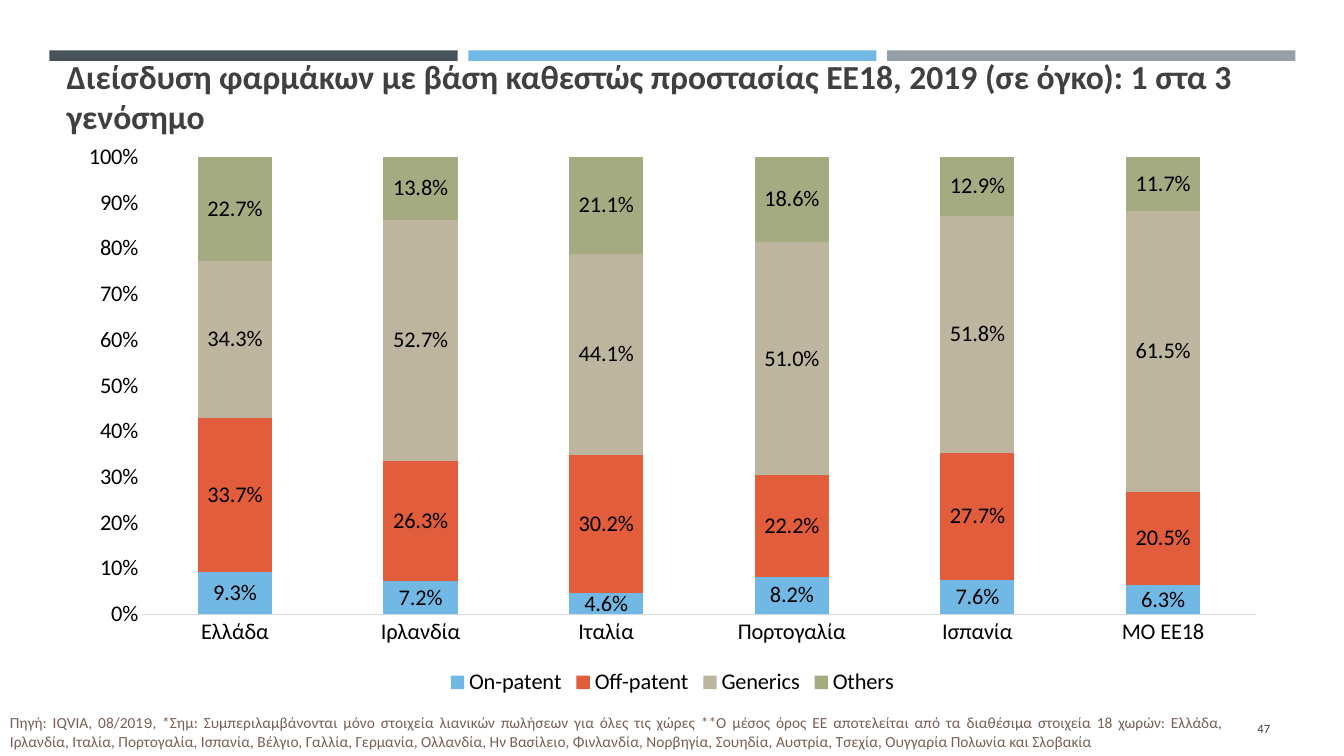
"""Builds the slide on medicine penetration by protection status, EU18, 2019."""
from dataclasses import dataclass

from pptx import Presentation
from pptx.chart.data import CategoryChartData
from pptx.dml.color import RGBColor
from pptx.enum.chart import XL_CHART_TYPE, XL_LABEL_POSITION, XL_LEGEND_POSITION, XL_TICK_MARK
from pptx.enum.shapes import MSO_SHAPE
from pptx.enum.text import MSO_ANCHOR, MSO_AUTO_SIZE, PP_ALIGN
from pptx.util import Pt

STACKED = XL_CHART_TYPE.COLUMN_STACKED_100
CENTER_LABEL = XL_LABEL_POSITION.CENTER
LEGEND_BOTTOM = XL_LEGEND_POSITION.BOTTOM
NO_TICK = XL_TICK_MARK.NONE
RECTANGLE = MSO_SHAPE.RECTANGLE
TOP, MIDDLE, BOTTOM = MSO_ANCHOR.TOP, MSO_ANCHOR.MIDDLE, MSO_ANCHOR.BOTTOM
LEFT, RIGHT, JUSTIFY = PP_ALIGN.LEFT, PP_ALIGN.RIGHT, PP_ALIGN.JUSTIFY
NO_AUTOFIT = MSO_AUTO_SIZE.NONE


@dataclass(frozen=True)
class Theme:
    font: str = "Calibri"
    digit_font: str = "Karla"
    bars: tuple = ("465359", "71B9E4", "969FA7")
    series: tuple = ("71B9E4", "E25D3C", "BDB59D", "A5AB81")
    text: str = "404040"
    source: str = "775F55"
    chart_text: str = "000000"
    axis: str = "D9D9D9"
    title_size: int = 24
    chart_size: int = 16
    source_size: int = 11
    number_size: int = 9


theme = Theme()


def color(value):
    """Return the colour object for a hex string."""
    return RGBColor.from_string(value)


def write(shape, runs, size, hue, alignment, anchor, bold=False):
    """Fill the shape with one paragraph made of (text, font) runs."""
    frame = shape.text_frame
    frame.word_wrap = True
    frame.auto_size = NO_AUTOFIT
    frame.vertical_anchor = anchor
    paragraph = frame.paragraphs[0]
    paragraph.alignment = alignment
    for text, font in runs:
        run = paragraph.add_run()
        run.text = text
        run.font.name = font
        run.font.size = Pt(size)
        run.font.bold = bold
        run.font.color.rgb = color(hue)
    return paragraph


presentation = Presentation()
presentation.slide_width, presentation.slide_height = Pt(960), Pt(540)
slide = presentation.slides.add_slide(presentation.slide_layouts[5])
shapes = slide.shapes

for index, hue in enumerate(theme.bars):
    bar = shapes.add_shape(RECTANGLE, Pt(35.3 + 299.2 * index), Pt(36), Pt(291.6), Pt(7.5))
    bar.shadow.inherit = False
    bar.fill.solid()
    bar.fill.fore_color.rgb = color(hue)
    bar.line.fill.background()

title = shapes.title
title.left, title.top, title.width, title.height = Pt(40.3), Pt(43.2), Pt(886.3), Pt(57.6)
write(title, [("Διείσδυση φαρμάκων με βάση καθεστώς προστασίας ΕΕ18, 2019 (σε όγκο): 1 στα 3 γενόσημο", theme.font)],
      theme.title_size, theme.text, LEFT, BOTTOM, bold=True)

number_box = shapes.add_textbox(Pt(831.6), Pt(506.2), Pt(82.8), Pt(28.8))
write(number_box, [("47", theme.font)], theme.number_size, theme.text, RIGHT, MIDDLE)

source_box = shapes.add_textbox(Pt(0), Pt(504.7), Pt(881.3), Pt(36))
source = write(source_box, [
    ("Πηγή: IQVIA, 08/201", theme.font),
    ("9", theme.digit_font),
    (", *Σημ: Συμπεριλαμβάνονται μόνο στοιχεία λιανικών πωλήσεων για όλες τις χώρες "
     "**Ο μέσος όρος ΕΕ αποτελείται από τα διαθέσιμα στοιχεία 18 χωρών: Ελλάδα, Ιρλανδία, "
     "Ιταλία, Πορτογαλία, Ισπανία, Βέλγιο, Γαλλία, Γερμανία, Ολλανδία, Ην Βασίλειο, Φινλανδία, "
     "Νορβηγία, Σουηδία, Αυστρία, Τσεχία, Ουγγαρία Πολωνία και Σλοβακία", theme.font),
], theme.source_size, theme.source, JUSTIFY, TOP)
source.line_spacing = 1.07
source.space_after = Pt(8)

chart_data = CategoryChartData(number_format="0.0%")
chart_data.categories = ["Ελλάδα", "Ιρλανδία", "Ιταλία", "Πορτογαλία", "Ισπανία", "ΜΟ ΕΕ18"]
chart_data.add_series("On-patent", (0.093, 0.072, 0.046, 0.082, 0.076, 0.063))
chart_data.add_series("Off-patent", (0.337, 0.263, 0.302, 0.222, 0.277, 0.205))
chart_data.add_series("Generics", (0.343, 0.527, 0.441, 0.51, 0.518, 0.615))
chart_data.add_series("Others", (0.227, 0.138, 0.211, 0.186, 0.129, 0.117))
chart = shapes.add_chart(STACKED, Pt(46.1), Pt(94.3), Pt(868.3), Pt(406.1), chart_data).chart
chart.font.name = theme.font
chart.font.size = Pt(theme.chart_size)
chart.font.color.rgb = color(theme.chart_text)
chart.has_title = False
chart.has_legend = True
chart.legend.position = LEGEND_BOTTOM
chart.legend.include_in_layout = False

category_axis, value_axis = chart.category_axis, chart.value_axis
for axis in (category_axis, value_axis):
    axis.major_tick_mark = axis.minor_tick_mark = NO_TICK
    axis.has_major_gridlines = False
category_axis.format.line.color.rgb = color(theme.axis)
category_axis.format.line.width = Pt(0.75)
value_axis.format.line.fill.background()
value_axis.minimum_scale, value_axis.maximum_scale, value_axis.major_unit = 0, 1, 0.1
value_axis.tick_labels.number_format = "0%"
value_axis.tick_labels.number_format_is_linked = False

plot = chart.plots[0]
plot.gap_width, plot.overlap = 150, 100
plot.vary_by_categories = False
for series, hue in zip(plot.series, theme.series):
    series.format.fill.solid()
    series.format.fill.fore_color.rgb = color(hue)
    labels = series.data_labels
    labels.show_value = True
    labels.position = CENTER_LABEL
    labels.number_format = "0.0%"
    labels.number_format_is_linked = False

presentation.save("out.pptx")
